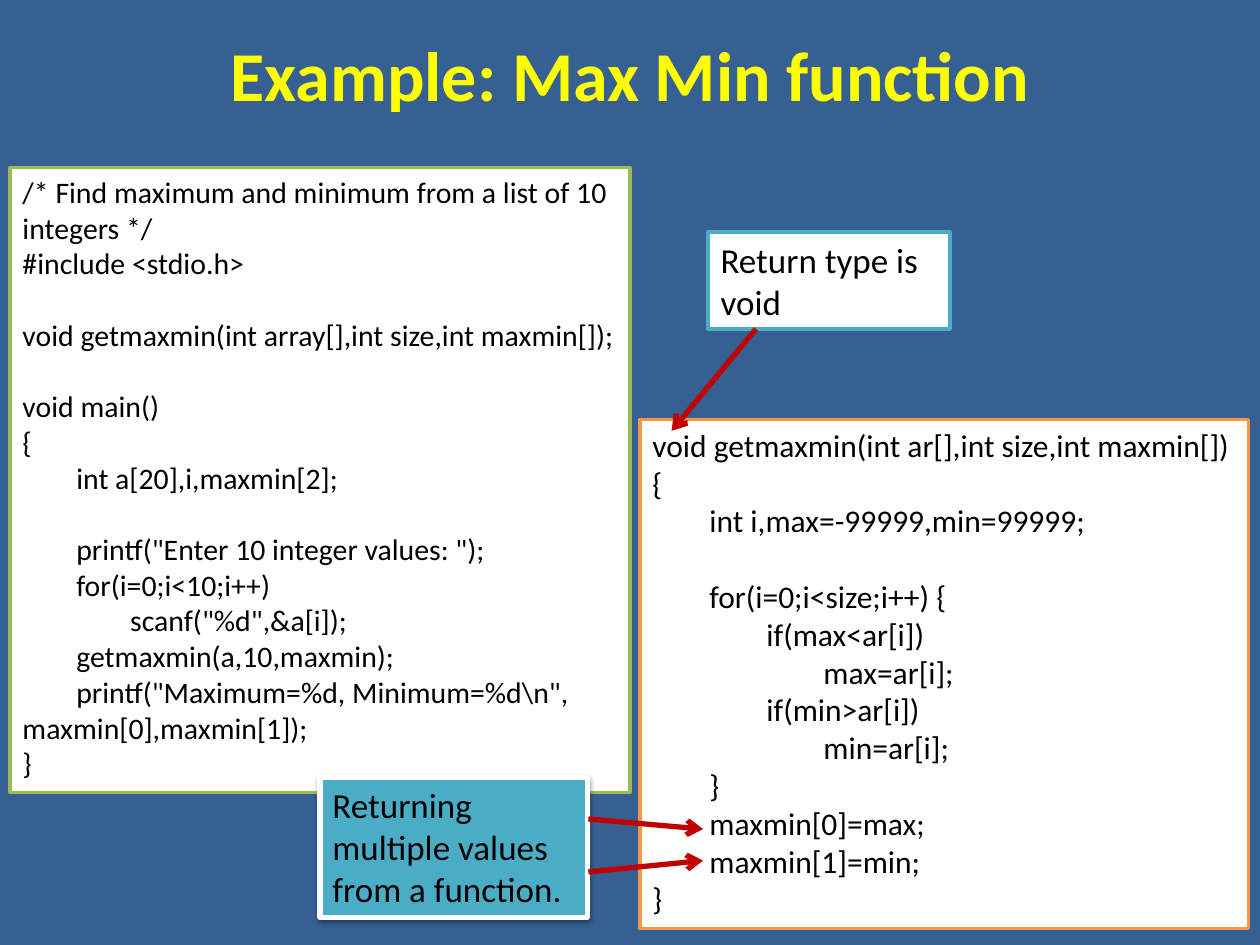
from lxml.etree import SubElement
from pptx import Presentation
from pptx.dml.color import RGBColor
from pptx.enum.shapes import MSO_CONNECTOR, MSO_SHAPE
from pptx.enum.text import MSO_ANCHOR, MSO_AUTO_SIZE, PP_ALIGN
from pptx.oxml.ns import qn
from pptx.util import Inches, Pt

# Content: code lines are (indent level, text); None leaves a one-line gap
TITLE = "Example: Max Min function"
MAIN_CODE = [
    (0, "/* Find maximum and minimum from a list of 10 integers */"),
    (0, "#include <stdio.h>"),
    None,
    (0, "void getmaxmin(int array[],int size,int maxmin[]);"),
    None,
    (0, "void main()"),
    (0, "{"),
    (1, "int a[20],i,maxmin[2];"),
    None,
    (1, 'printf("Enter 10 integer values: ");'),
    (1, "for(i=0;i<10;i++)"),
    (2, 'scanf("%d",&a[i]);'),
    (1, "getmaxmin(a,10,maxmin);"),
    (1, 'printf("Maximum=%d, Minimum=%d\\n", maxmin[0],maxmin[1]);'),
    (0, "}"),
]
FUNCTION_CODE = [
    (0, "void getmaxmin(int ar[],int size,int maxmin[])"),
    (0, "{"),
    (1, "int i,max=-99999,min=99999;"),
    None,
    (1, "for(i=0;i<size;i++) {"),
    (2, "if(max<ar[i])"),
    (3, "max=ar[i];"),
    (2, "if(min>ar[i])"),
    (3, "min=ar[i];"),
    (1, "}"),
    (1, "maxmin[0]=max;"),
    (1, "maxmin[1]=min;"),
    (0, "}"),
]
VOID_NOTE = [(0, "Return type is void")]
RETURN_NOTE = [(0, "Returning multiple values from a function.")]

# left, top, width, height, lines, text size, fill, line, line width, shadow
BOXES = [
    (0.08, 1.33, 4.92, 4.96, MAIN_CODE, 17, "FFFFFF", "9BBB59", 2, False),
    (5.08, 3.33, 4.83, 4.04, FUNCTION_CODE, 18, "FFFFFF", "F79646", 2, False),
    (5.62, 1.84, 1.92, 0.77, VOID_NOTE, 20, "FFFFFF", "4BACC6", 2, False),
    (2.54, 6.17, 2.12, 1.11, RETURN_NOTE, 20, "4BACC6", "FFFFFF", 3, True),
]
ARROWS = [(4.67, 6.5, 5.58, 6.58), (4.67, 6.92, 5.58, 6.83), (6, 2.61, 5.33, 3.42)]
INDENT_EM = 1.81   # width of one code indent, in ems
LINE_EM = 1.2      # height of one line, in ems


def color(hex_value):
    return RGBColor.from_string(hex_value)


def write(tf, lines, size, font_color="000000", bold=False, align=PP_ALIGN.LEFT):
    tf.word_wrap = True
    tf.vertical_anchor = MSO_ANCHOR.TOP
    p, gap = tf.paragraphs[0], 0
    for line in lines:
        if line is None:
            gap = size * LINE_EM
            continue
        level, text = line
        if p.runs:
            p = tf.add_paragraph()
        p.alignment = align
        p.space_before = Pt(gap)
        # First-line indent only, so wrapped code returns to the margin
        pPr = p._p.get_or_add_pPr()
        pPr.set("marL", "0")
        pPr.set("indent", str(int(Pt(level * INDENT_EM * size))))
        r = p.add_run()
        r.text = text
        r.font.name, r.font.size, r.font.bold = "Calibri", Pt(size), bold
        r.font.color.rgb = color(font_color)
        gap = 0


def add_box(s, left, top, width, height, lines, size, fill, line, weight, shadow):
    sp = s.shapes.add_shape(MSO_SHAPE.RECTANGLE, *map(Inches, (left, top, width, height)))
    sp.fill.solid()
    sp.fill.fore_color.rgb = color(fill)
    sp.line.color.rgb = color(line)
    sp.line.width = Pt(weight)
    sp.shadow.inherit = False
    if shadow:
        effects = sp._element.spPr.find(qn("a:effectLst"))
        outer = SubElement(effects, qn("a:outerShdw"), blurRad=str(Pt(3.1)),
                           dist=str(Pt(1.6)), dir="5400000", rotWithShape="0")
        black = SubElement(outer, qn("a:srgbClr"), val="000000")
        SubElement(black, qn("a:alpha"), val="38000")
    write(sp.text_frame, lines, size)
    sp.text_frame.auto_size = MSO_AUTO_SIZE.SHAPE_TO_FIT_TEXT


def add_arrow(s, *ends):
    cxn = s.shapes.add_connector(MSO_CONNECTOR.STRAIGHT, *map(Inches, ends))
    cxn.line.color.rgb = color("C00000")
    cxn.line.width = Pt(3)
    SubElement(cxn.line._get_or_add_ln(), qn("a:tailEnd"), type="arrow")
    SubElement(cxn._element.spPr, qn("a:effectLst"))


def main():
    prs = Presentation()
    prs.slide_width, prs.slide_height = Inches(10), Inches(7.5)
    s = prs.slides.add_slide(prs.slide_layouts[5])
    s.background.fill.solid()
    s.background.fill.fore_color.rgb = color("376092")

    # Title
    title = s.shapes.title
    title.left, title.top, title.width, title.height = map(Inches, (0.5, 0.17, 9, 0.95))
    write(title.text_frame, [(0, TITLE)], 40, "FFFF00", True, PP_ALIGN.CENTER)
    title.text_frame.margin_top = Inches(0.08)

    # Code boxes and notes, then the arrows between them
    for box in BOXES:
        add_box(s, *box)
    for arrow in ARROWS:
        add_arrow(s, *arrow)

    prs.save("out.pptx")


if __name__ == "__main__":
    main()
